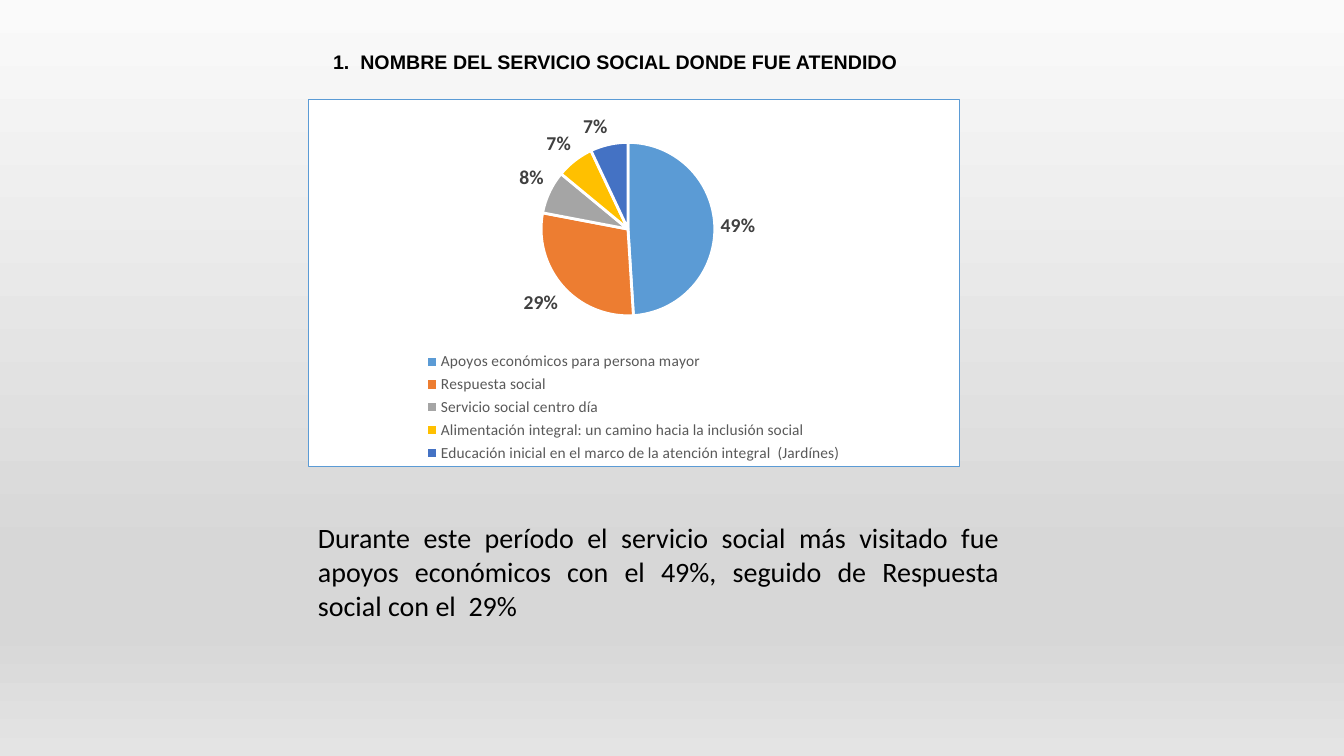
import copy

import lxml.etree
import pptx
import pptx.chart.data
import pptx.dml.color
import pptx.enum.chart
import pptx.enum.text
import pptx.oxml
import pptx.oxml.ns
import pptx.util

PX = 914400 / 100.8
PAGE_SIZE = (1344, 756)
TITLE_BOX = (323, 45, 694, 34)
CHART_BOX = (308, 99, 652, 368)
SUMMARY_BOX = (308, 516, 701, 112)
PIE_BOX = (233, 43, 174, 174)

BACKGROUND_STOPS = [(0, "FAFAFA"), (0.74, "D7D7D7"), (0.83, "D7D7D7"), (1, "E4E4E4")]
SERVICES = [
    ("Apoyos económicos para persona mayor", 49, "5B9BD5"),
    ("Respuesta social", 29, "ED7D31"),
    ("Servicio social centro día", 8, "A5A5A5"),
    ("Alimentación integral: un camino hacia la inclusión social", 7, "FFC000"),
    ("Educación inicial en el marco de la atención integral  (Jardínes)", 7, "4472C4"),
]


def px(length):
    """Turn a pixel length into EMU."""
    return pptx.util.Emu(round(length * PX))


def color(value):
    """Turn a hex string into a colour."""
    return pptx.dml.color.RGBColor.from_string(value)


def style_font(font, name, size, value, bold=False):
    """Set the face, size, colour and weight of a font."""
    font.name = name
    font.size = pptx.util.Pt(size)
    font.bold = bold
    font.color.rgb = color(value)


def paint_background(page):
    """Fill the page with the vertical grey gradient."""
    fill = page.background.fill
    fill.gradient()
    fill.gradient_angle = 270
    stop_list = page.element.find(".//" + pptx.oxml.ns.qn("a:gsLst"))
    while len(stop_list) < len(BACKGROUND_STOPS):
        stop_list.append(copy.deepcopy(stop_list[0]))
    for stop, (position, value) in zip(fill.gradient_stops, BACKGROUND_STOPS):
        stop.color.rgb = color(value)
        stop.position = position


def write_text(shape, box, text, font_name, size, alignment, bold=False):
    """Place a text shape in its box and write one paragraph."""
    shape.left, shape.top, shape.width, shape.height = map(px, box)
    frame = shape.text_frame
    frame.word_wrap = True
    frame.auto_size = pptx.enum.text.MSO_AUTO_SIZE.SHAPE_TO_FIT_TEXT
    frame.vertical_anchor = pptx.enum.text.MSO_ANCHOR.TOP
    para = frame.paragraphs[0]
    para.alignment = alignment
    span = para.add_run()
    span.text = text
    style_font(span.font, font_name, size, "000000", bold)


def frame_chart(chart):
    """Give the chart area a white fill and a thin blue border."""
    area = pptx.oxml.parse_xml(
        f'<c:spPr {pptx.oxml.ns.nsdecls("c", "a")}>'
        '<a:solidFill><a:srgbClr val="FFFFFF"/></a:solidFill>'
        '<a:ln w="9525"><a:solidFill><a:srgbClr val="5B9BD5"/></a:solidFill></a:ln>'
        "</c:spPr>"
    )
    chart.element.find(pptx.oxml.ns.qn("c:chart")).addnext(area)


def place_pie(chart, box):
    """Fix the pie inside the chart at its place in the given box."""
    plot_area = chart.element.find(".//" + pptx.oxml.ns.qn("c:plotArea"))
    for old in plot_area.findall(pptx.oxml.ns.qn("c:layout")):
        plot_area.remove(old)
    layout = pptx.oxml.parse_xml(f'<c:layout {pptx.oxml.ns.nsdecls("c")}/>')
    manual = lxml.etree.SubElement(layout, pptx.oxml.ns.qn("c:manualLayout"))
    left, top, width, height = PIE_BOX
    settings = [
        ("layoutTarget", "inner"), ("xMode", "edge"), ("yMode", "edge"),
        ("x", left / box[2]), ("y", top / box[3]),
        ("w", width / box[2]), ("h", height / box[3]),
    ]
    for tag, value in settings:
        item = lxml.etree.SubElement(manual, pptx.oxml.ns.qn("c:" + tag))
        item.set("val", str(value))
    plot_area.insert(0, layout)


def add_services_chart(page, box):
    """Draw the pie of social services with its legend."""
    data = pptx.chart.data.CategoryChartData()
    data.categories = [name for name, share, value in SERVICES]
    data.add_series("Series 1", [share for name, share, value in SERVICES])
    chart = page.shapes.add_chart(
        pptx.enum.chart.XL_CHART_TYPE.PIE, *map(px, box), data
    ).chart
    style_font(chart.font, "Calibri", 10, "000000")
    chart.has_title = False
    chart.has_legend = True
    chart.legend.position = pptx.enum.chart.XL_LEGEND_POSITION.BOTTOM
    chart.legend.include_in_layout = False
    style_font(chart.legend.font, "Calibri", 11, "595959")

    plot = chart.plots[0]
    plot.vary_by_categories = True
    for index, (name, share, value) in enumerate(SERVICES):
        slice_format = plot.series[0].points[index].format
        slice_format.fill.solid()
        slice_format.fill.fore_color.rgb = color(value)
        slice_format.line.color.rgb = color("FFFFFF")
        slice_format.line.width = pptx.util.Pt(2)

    labels = plot.series[0].data_labels
    labels.show_value = False
    labels.show_percentage = True
    labels.number_format = "0%"
    labels.number_format_is_linked = False
    labels.position = pptx.enum.chart.XL_LABEL_POSITION.OUTSIDE_END
    style_font(labels.font, "Calibri", 14, "404040", bold=True)
    frame_chart(chart)
    place_pie(chart, box)


def build_survey_page(deck):
    """Build the page with its title, chart and summary."""
    page = deck.slides.add_slide(deck.slide_layouts[5])
    align = pptx.enum.text.PP_ALIGN
    paint_background(page)
    write_text(
        page.shapes.title, TITLE_BOX,
        "1.  NOMBRE DEL SERVICIO SOCIAL DONDE FUE ATENDIDO",
        "Arial", 14, align.LEFT, bold=True,
    )
    summary = page.shapes.add_textbox(*map(px, SUMMARY_BOX))
    write_text(
        summary, SUMMARY_BOX,
        "Durante este período el servicio social más visitado fue apoyos económicos "
        "con el 49%, seguido de Respuesta social con el  29%",
        "Calibri", 20, align.JUSTIFY,
    )
    add_services_chart(page, CHART_BOX)


def main():
    """Create the deck and save it."""
    deck = pptx.Presentation()
    deck.slide_width, deck.slide_height = map(px, PAGE_SIZE)
    build_survey_page(deck)
    deck.save("out.pptx")


if __name__ == "__main__":
    main()
